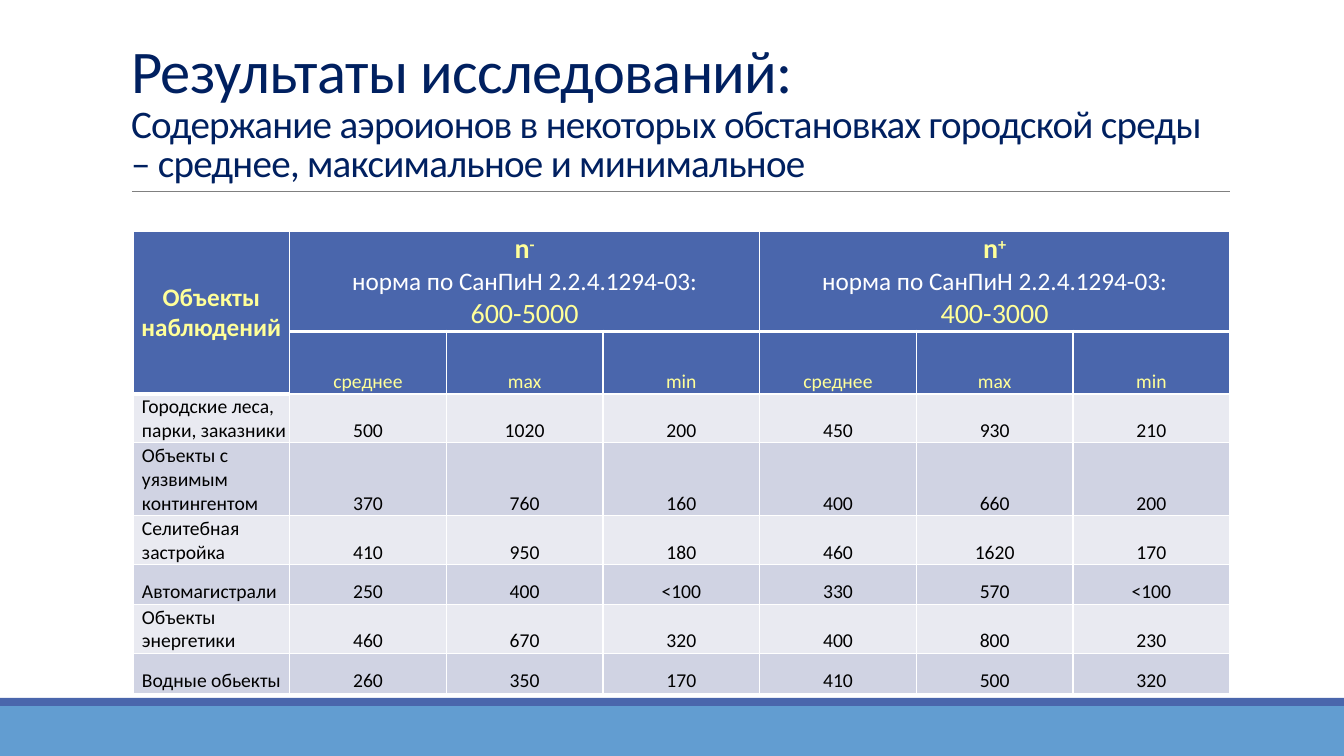
from lxml import etree
from pptx import Presentation, util as u
from pptx.dml.color import RGBColor
from pptx.enum import shapes, text
from pptx.oxml import ns

FONT = "Calibri"
BLUE, SKY, NAVY, YELLOW, WHITE = "4A66AC", "629DD1", "002060", "FFFF99", "FFFFFF"
BAND_FILLS = ("E9EAF1", "D0D3E3")
CENTER = text.PP_ALIGN.CENTER
BOTTOM, MIDDLE = text.MSO_ANCHOR.BOTTOM, text.MSO_ANCHOR.MIDDLE

ROW_HEIGHTS = (100, 62, 48, 72, 49, 40, 49, 40)
IONS = (("-", "600-5000"), ("+", "400-3000"))
MEASURES = ("cреднее", "max", "min")
OBSERVATIONS = (
    ("Городские леса, парки, заказники", "500", "1020", "200", "450", "930", "210"),
    ("Объекты с уязвимым контингентом", "370", "760", "160", "400", "660", "200"),
    ("Селитебная застройка", "410", "950", "180", "460", "1620", "170"),
    ("Автомагистрали", "250", "400", "<100", "330", "570", "<100"),
    ("Объекты энергетики", "460", "670", "320", "400", "800", "230"),
    ("Водные обьекты", "260", "350", "170", "410", "500", "320"),
)


def px(length):
    return u.Emu(round(length * 914400 / 100.8))


def color(value):
    return RGBColor.from_string(value)


def write(paragraph, words, size, fill, bold=False, align=None, **attributes):
    """Add a formatted run; extra attributes go on its a:rPr element."""
    run = paragraph.add_run()
    run.text = words
    font = run.font
    font.name, font.size, font.bold = FONT, u.Pt(size), bold
    font.color.rgb = color(fill)
    if align is not None:
        paragraph.alignment = align
    for name, value in attributes.items():
        font._element.set(name, value)


def add_title(slide, left, top, width, height):
    title = slide.shapes.title
    title.left, title.top, title.width, title.height = map(px, (left, top, width, height))
    frame = title.text_frame
    frame.auto_size = text.MSO_AUTO_SIZE.NONE
    frame.word_wrap = True
    frame.vertical_anchor = BOTTOM
    paragraph = frame.paragraphs[0]
    paragraph.alignment = text.PP_ALIGN.LEFT
    paragraph.line_spacing = 0.85
    write(paragraph, "Результаты исследований:", 43.2, NAVY, spc="-50")
    paragraph.add_line_break()
    write(paragraph, "Содержание аэроионов в некоторых обстановках городской среды"
          " – среднее, максимальное и минимальное", 27.9, NAVY, spc="-50")


def add_title_rule(slide, left, top, width):
    rule = slide.shapes.add_connector(
        shapes.MSO_CONNECTOR.STRAIGHT, px(left), px(top), px(left + width), px(top))
    rule.line.color.rgb = color("808080")
    rule.line.width = u.Pt(0.5)
    etree.SubElement(rule._element.spPr, ns.qn("a:effectLst"))


def add_footer_band(slide, left, top, width, height, fill):
    band = slide.shapes.add_shape(
        shapes.MSO_SHAPE.RECTANGLE, *map(px, (left, top, width, height)))
    band.shadow.inherit = False
    band.fill.solid()
    band.fill.fore_color.rgb = color(fill)
    band.line.fill.background()


def add_border(cell, side, points):
    line = etree.SubElement(
        cell._tc.get_or_add_tcPr(), ns.qn("a:ln" + side), w=str(u.Pt(points)))
    fill = etree.SubElement(line, ns.qn("a:solidFill"))
    etree.SubElement(fill, ns.qn("a:srgbClr"), val=WHITE)


def style_cell(cell, fill, top=1, bottom=1, anchor=BOTTOM):
    for side, points in (("L", 1), ("R", 1), ("T", top), ("B", bottom)):
        add_border(cell, side, points)
    cell.fill.solid()
    cell.fill.fore_color.rgb = color(fill)
    cell.vertical_anchor = anchor
    cell.margin_left = cell.margin_right = cell.margin_top = px(1)
    cell.margin_bottom = 0


def fill_header(table):
    for column in range(len(table.columns)):
        style_cell(table.cell(0, column), BLUE, bottom=3,
                   anchor=BOTTOM if column else MIDDLE)
        style_cell(table.cell(1, column), BLUE, top=3, bottom=1 if column else 3)

    objects = table.cell(0, 0)
    objects.merge(table.cell(1, 0))
    frame = objects.text_frame
    write(frame.paragraphs[0], "Объекты", 18, YELLOW, True, CENTER)
    write(frame.add_paragraph(), "наблюдений", 18, YELLOW, True, CENTER)

    for group, (sign, norm) in enumerate(IONS):
        first = 1 + group * len(MEASURES)
        ion = table.cell(0, first)
        ion.merge(table.cell(0, first + len(MEASURES) - 1))
        frame = ion.text_frame
        write(frame.paragraphs[0], "n", 20, YELLOW, True, CENTER)
        write(frame.paragraphs[0], sign, 20, YELLOW, True, baseline="30000")
        write(frame.add_paragraph(), "норма по СанПиН 2.2.4.1294-03:", 18, WHITE, align=CENTER)
        write(frame.add_paragraph(), norm, 20, YELLOW, align=CENTER)
        for offset, measure in enumerate(MEASURES):
            paragraph = table.cell(1, first + offset).text_frame.paragraphs[0]
            write(paragraph, measure, 14, YELLOW, align=CENTER)


def fill_observations(table):
    for index, values in enumerate(OBSERVATIONS):
        for column, value in enumerate(values):
            cell = table.cell(index + 2, column)
            top = 3 if index == column == 0 else 1
            style_cell(cell, BAND_FILLS[index % 2], top=top)
            paragraph = cell.text_frame.paragraphs[0]
            write(paragraph, value, 14, "000000", align=CENTER if column else None)
            if column == 0:
                properties = paragraph._p.get_or_add_pPr()
                properties.set("marL", str(px(8)))
                properties.set("indent", "0")


def add_ion_table(slide, left, top, width):
    table = slide.shapes.add_table(
        len(ROW_HEIGHTS), 1 + len(IONS) * len(MEASURES),
        *map(px, (left, top, width, sum(ROW_HEIGHTS)))).table
    for row, height in zip(table.rows, ROW_HEIGHTS):
        row.height = px(height)
    fill_header(table)
    fill_observations(table)


def main():
    presentation = Presentation()
    presentation.slide_width, presentation.slide_height = px(1344), px(756)
    slide = presentation.slides.add_slide(presentation.slide_layouts[5])
    add_footer_band(slide, 0, 706, 1344, 50, SKY)
    add_footer_band(slide, 0, 698, 1344, 8, BLUE)
    add_title_rule(slide, 132, 191, 1098)
    add_title(slide, 121, 31, 1109, 160)
    add_ion_table(slide, 133, 231, 1097)
    presentation.save("out.pptx")


if __name__ == "__main__":
    main()
